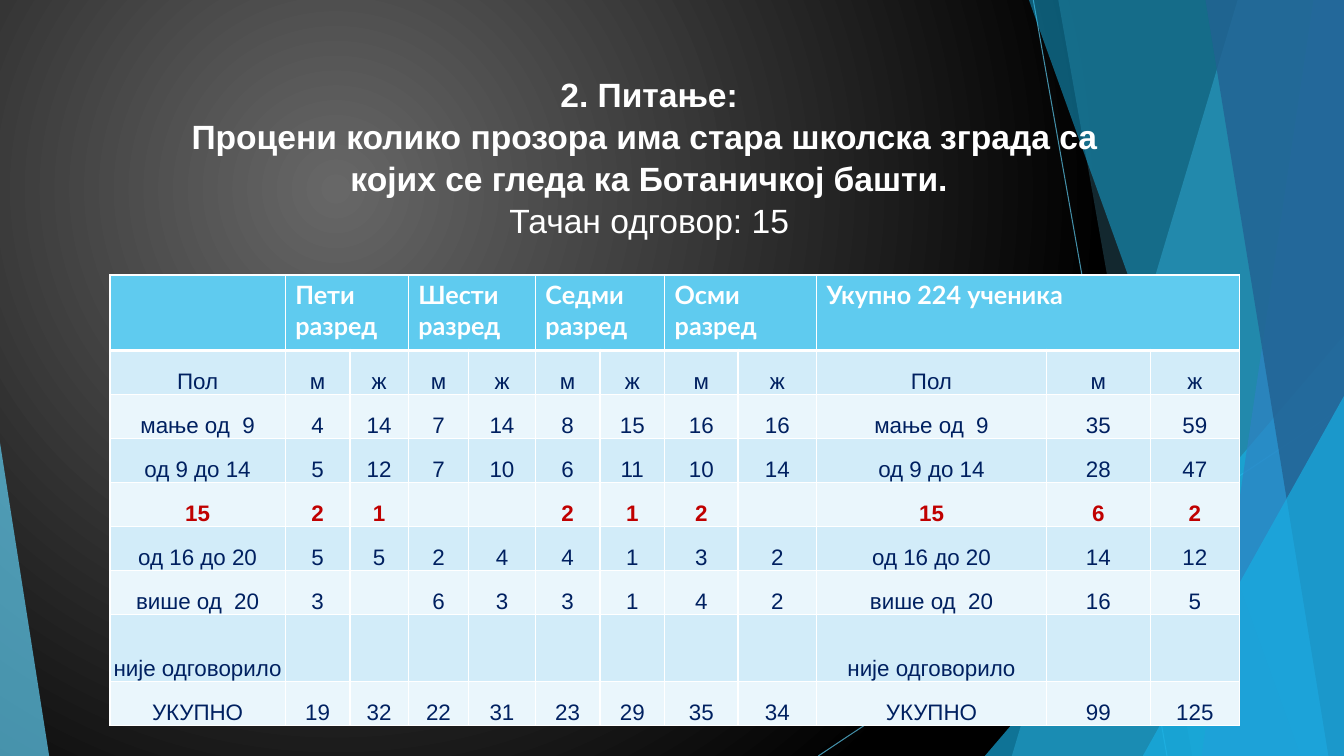
from pptx import Presentation
from pptx.dml.color import RGBColor
from pptx.enum.shapes import MSO_CONNECTOR as Connector, MSO_SHAPE as Shape
from pptx.enum.text import MSO_ANCHOR as Anchor, MSO_AUTO_SIZE as AutoSize, PP_ALIGN as Align
from pptx.oxml.ns import qn
from pptx.util import Cm, Pt
from lxml.etree import SubElement

# Content
QUESTION = ["2. Питање:",
            "Процени колико прозора има стара школска зграда са ",
            "којих се гледа ка Ботаничкој башти."]
ANSWER = "Тачан одговор: 15"
HEADINGS = [("", 1), ("Пети разред", 2), ("Шести разред", 2), ("Седми разред", 2),
            ("Осми разред", 2), ("Укупно 224 ученика", 3)]  # text, columns spanned
CORRECT = "15"
# estimate, м and ж for each of four grades, м and ж in total
ESTIMATES = [
    ("Пол", ["м", "ж"] * 4, ["м", "ж"]),
    ("мање од  9", [4, 14, 7, 14, 8, 15, 16, 16], [35, 59]),
    ("од 9 до 14", [5, 12, 7, 10, 6, 11, 10, 14], [28, 47]),
    (CORRECT, [2, 1, "", "", 2, 1, 2, ""], [6, 2]),
    ("од 16 до 20", [5, 5, 2, 4, 4, 1, 3, 2], [14, 12]),
    ("више од  20", [3, "", 6, 3, 3, 1, 4, 2], [16, 5]),
    ("није одговорило", [""] * 8, ["", ""]),
    ("УКУПНО", [19, 32, 22, 31, 23, 29, 35, 34], [99, 125]),
]

# Measures in cm
WIDTH, HEIGHT = 33.87, 19.05
COLUMNS = [4.42, 1.63, 1.47, 1.52, 1.68, 1.63, 1.63, 1.85, 1.98, 5.79, 2.62, 2.24]
ROWS = [1.9] + [1.11] * 6 + [1.68, 1.11]
RAYS = [(26.04, 0, 29.41, HEIGHT), (WIDTH, 10.24, 20.62, HEIGHT)]
# Facets reach the right edge: left end at top, left end at bottom, colour, opacity
# Corners: left, top, width, place of the tip, colour, opacity
FACETS = [
    ("band", (31.19, 25.5), "5FCBEF", 36),
    ("band", (26.67, 30.05), "5FCBEF", 20),
    ("corner", (24.82, 8.46, 9.05, 1), "17B0E4", 66),
    ("band", (25.93, 32.79), "17B0E4", 50),
    ("band", (33.1, 30.28), "2E83C3", 70),
    ("band", (30.38, 33.48), "226292", 80),
    ("corner", (28.8, 9.98, 5.07, 1), "17B0E4", 66),
    ("corner", (0, 11.15, 1.24, 0), "5FCBEF", 70),
]


def color(hex_code):
    return RGBColor.from_string(hex_code)


def write(paragraph, text, font="Arial", size=16, hue="002060", bold=False, align=None):
    run = paragraph.add_run()
    run.text = str(text)
    run.font.name, run.font.size, run.font.bold = font, Pt(size), bold
    run.font.color.rgb = color(hue)
    paragraph.alignment = align


def set_opacity(part, percent):
    for rgb in part._element.spPr.iter(qn("a:srgbClr")):
        SubElement(rgb, qn("a:alpha"), val=str(percent * 1000))


def add_border(cell, side, points):
    line = SubElement(cell._tc.get_or_add_tcPr(), qn("a:ln" + side), w=str(Pt(points)))
    SubElement(SubElement(line, qn("a:solidFill")), qn("a:srgbClr"), val="FFFFFF")


def style_cell(cell, fill, top=1, bottom=1):
    for side, points in (("L", 1), ("R", 1), ("T", top), ("B", bottom)):
        add_border(cell, side, points)
    cell.fill.solid()
    cell.fill.fore_color.rgb = color(fill)


def add_backdrop(slide):
    # Radial gradient
    fill = slide.background.fill
    fill.gradient()
    for stop, hue in zip(fill.gradient_stops, ("676767", "000000")):
        stop.color.rgb = color(hue)
    gradient = slide.element.find(".//" + qn("a:gradFill"))
    gradient.remove(gradient.find(qn("a:lin")))
    circle = SubElement(gradient, qn("a:path"), path="circle")
    SubElement(circle, qn("a:fillToRect"), l="50000", t="50000", r="100000", b="100000")

    # Thin rays
    for ends in RAYS:
        ray = slide.shapes.add_connector(Connector.STRAIGHT, *map(Cm, ends))
        ray.line.color.rgb = color("5FCBEF")
        ray.line.width = Pt(0.75)
        set_opacity(ray, 70)
        SubElement(ray._element.spPr, qn("a:effectLst"))

    # Translucent facets
    for kind, place, hue, opacity in FACETS:
        if kind == "band":
            top_left, bottom_left = place
            outline = slide.shapes.build_freeform(Cm(top_left), 0)
            outline.add_line_segments([(Cm(WIDTH), 0), (Cm(WIDTH), Cm(HEIGHT)),
                                       (Cm(bottom_left), Cm(HEIGHT))], close=True)
            facet = outline.convert_to_shape()
        else:
            left, top, width, tip = place
            facet = slide.shapes.add_shape(Shape.ISOSCELES_TRIANGLE, Cm(left), Cm(top),
                                           Cm(width), Cm(HEIGHT - top))
            facet.adjustments[0] = tip
        facet.shadow.inherit = False
        facet.line.fill.background()
        facet.fill.solid()
        facet.fill.fore_color.rgb = color(hue)
        set_opacity(facet, opacity)


def add_question(slide):
    title = slide.shapes.title
    title.left, title.top, title.width, title.height = map(Cm, (1.88, 1.7, 28.96, 3.66))
    frame = title.text_frame
    frame.auto_size, frame.word_wrap = AutoSize.NONE, True
    frame.vertical_anchor = Anchor.TOP
    paragraph = frame.paragraphs[0]
    paragraph.line_spacing = 1.04
    look = dict(size=24, hue="FFFFFF", align=Align.CENTER)
    for line in QUESTION:
        write(paragraph, line, bold=True, **look)
        paragraph.add_line_break()
    write(paragraph, ANSWER, **look)
    slide.shapes._spTree.append(title._element)  # in front of the facets


def add_estimates(slide):
    table = slide.shapes.add_table(len(ROWS), len(COLUMNS), Cm(2.77), Cm(6.93),
                                   Cm(sum(COLUMNS)), Cm(sum(ROWS))).table
    for column, width in zip(table.columns, COLUMNS):
        column.width = Cm(width)
    for row, height in zip(table.rows, ROWS):
        row.height = Cm(height)

    # Heading row
    for c in range(len(COLUMNS)):
        style_cell(table.cell(0, c), "5FCBEF", bottom=3)
    start = 0
    for heading, span in HEADINGS:
        cell = table.cell(0, start)
        if span > 1:
            cell.merge(table.cell(0, start + span - 1))
        if heading:
            write(cell.text_frame.paragraphs[0], heading, font="Lato", size=18,
                  hue="FFFFFF", bold=True)
        start += span

    # Estimates, with the label repeated before the totals
    for r, (label, grades, totals) in enumerate(ESTIMATES, start=1):
        correct = label == CORRECT
        for c, value in enumerate([label, *grades, label, *totals]):
            cell = table.cell(r, c)
            style_cell(cell, "D2ECF9" if r % 2 else "EAF6FC", top=3 if r == 1 else 1)
            cell.vertical_anchor = Anchor.BOTTOM
            cell.margin_left = cell.margin_right = cell.margin_top = Cm(0.02)
            cell.margin_bottom = 0
            if value != "":
                write(cell.text_frame.paragraphs[0], value, bold=correct,
                      hue="C00000" if correct else "002060", align=Align.CENTER)


def main():
    deck = Presentation()
    deck.slide_width, deck.slide_height = Cm(WIDTH), Cm(HEIGHT)
    slide = deck.slides.add_slide(deck.slide_layouts[5])
    add_backdrop(slide)
    add_question(slide)
    add_estimates(slide)
    deck.save("out.pptx")


if __name__ == "__main__":
    main()
